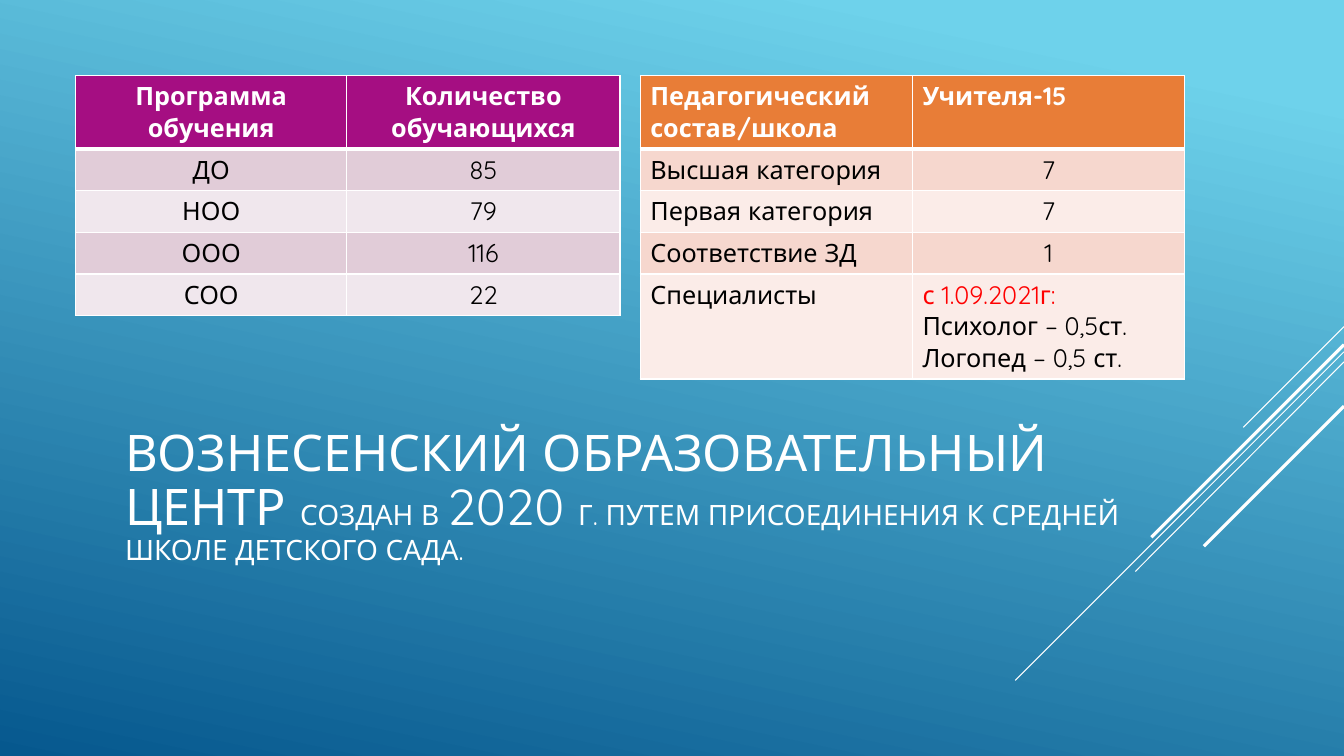
"""Build the education centre slide with its programme and staff tables."""
from dataclasses import dataclass

from lxml.etree import SubElement
from pptx import Presentation
from pptx.dml.color import RGBColor
from pptx.enum.shapes import MSO_CONNECTOR
from pptx.enum.text import MSO_ANCHOR, MSO_AUTO_SIZE, PP_ALIGN
from pptx.oxml.ns import qn
from pptx.slide import Slide
from pptx.util import Emu, Pt

FONT = "Quicksand"
WHITE = RGBColor(0xFF, 0xFF, 0xFF)
BLACK = RGBColor(0x00, 0x00, 0x00)
RED = RGBColor(0xFF, 0x00, 0x00)
SKY = RGBColor(0x6E, 0xD2, 0xEB)
NAVY = RGBColor(0x06, 0x58, 0x8E)
PURPLE = RGBColor(0xA5, 0x0E, 0x82)
PURPLE_MID = RGBColor(0xE1, 0xCC, 0xD8)
PURPLE_PALE = RGBColor(0xF0, 0xE7, 0xED)
ORANGE = RGBColor(0xE8, 0x7D, 0x37)
ORANGE_MID = RGBColor(0xF6, 0xD7, 0xCE)
ORANGE_PALE = RGBColor(0xFB, 0xEC, 0xE8)


@dataclass(frozen=True)
class Diagonal:
    top: int
    end_x: int
    end_y: int
    weight: float


@dataclass(frozen=True)
class TableSpec:
    left: int
    cols: tuple[int, ...]
    row_heights: tuple[int, ...]
    head: RGBColor
    bands: tuple[RGBColor, RGBColor]
    rows: tuple[tuple[str, ...], ...]
    centred: frozenset[tuple[int, int]]
    red_cells: frozenset[tuple[int, int]] = frozenset()


SLIDE_W, SLIDE_H = 1333, 750
TABLE_TOP = 75

DIAGONALS = (
    Diagonal(324, 1233, 424, 0.75),
    Diagonal(349, 1007, 675, 0.75),
    Diagonal(359, 1126, 567, 0.75),
    Diagonal(342, 1142, 533, 2.25),
    Diagonal(403, 1194, 542, 2.25),
)

TITLE_RUNS = (
    ("ВОЗНЕСЕНСКИЙ ОБРАЗОВАТЕЛЬНЫЙ ЦЕНТР ", 36),
    ("СОЗДАН В ", 20),
    ("2020 ", 36),
    ("Г. ПУТЕМ ПРИСОЕДИНЕНИЯ К СРЕДНЕЙ ШКОЛЕ ДЕТСКОГО САДА.", 20),
)

PROGRAMMES = TableSpec(
    75, (269, 271), (68, 41, 41, 41, 41), PURPLE, (PURPLE_MID, PURPLE_PALE),
    (
        ("Программа обучения", "Количество обучающихся"),
        ("ДО", "85"),
        ("НОО", "79"),
        ("ООО", "116"),
        ("СОО", "22"),
    ),
    frozenset((r, c) for r in range(5) for c in range(2)),
)

STAFF = TableSpec(
    635, (270, 270), (68, 41, 41, 41, 101), ORANGE, (ORANGE_MID, ORANGE_PALE),
    (
        ("Педагогический состав/школа", "Учителя-15"),
        ("Высшая категория", "7"),
        ("Первая категория", "7"),
        ("Соответствие ЗД", "1"),
        ("Специалисты", "с 1.09.2021г:\nПсихолог – 0,5ст. Логопед – 0,5 ст."),
    ),
    frozenset((r, 1) for r in range(1, 4)),
    frozenset({(4, 1)}),
)


def px(n: int) -> Emu:
    """Convert px, at 100 to the inch, into EMU."""
    return Emu(n * 9144)


def set_background(s: Slide) -> None:
    """Fill the slide background with the blue gradient."""
    fill = s.background.fill
    fill.gradient()
    fill.gradient_angle = 258
    for stop, position, color in zip(fill.gradient_stops, (0.1, 1.0), (SKY, NAVY)):
        stop.position = position
        stop.color.rgb = color


def add_diagonal(s: Slide, d: Diagonal) -> None:
    """Draw one white line from the right edge of the slide."""
    line = s.shapes.add_connector(
        MSO_CONNECTOR.STRAIGHT, px(SLIDE_W), px(d.top), px(d.end_x), px(d.end_y))
    line.line.color.rgb = WHITE
    line.line.width = Pt(d.weight)
    SubElement(line._element.spPr, qn("a:effectLst"))


def fill_title(s: Slide) -> None:
    """Place and write the slide title."""
    sp = s.shapes.title
    sp.left, sp.top, sp.width, sp.height = px(114), px(384), px(1043), px(269)
    tf = sp.text_frame
    tf.word_wrap = True
    tf.auto_size = MSO_AUTO_SIZE.NONE
    tf.vertical_anchor = MSO_ANCHOR.MIDDLE
    tf.margin_bottom = px(55)
    p = tf.paragraphs[0]
    p.alignment = PP_ALIGN.LEFT
    p.line_spacing = 0.9
    for text, size in TITLE_RUNS:
        r = p.add_run()
        r.text = text
        r.font.name = FONT
        r.font.size = Pt(size)
        r.font.color.rgb = WHITE


def set_borders(cell, bottom: float, top: float) -> None:
    """Give a cell white borders, ahead of its fill."""
    tc_pr = cell._tc.get_or_add_tcPr()
    weights = (("a:lnL", 1), ("a:lnR", 1), ("a:lnT", top), ("a:lnB", bottom))
    for i, (tag, weight) in enumerate(weights):
        ln = SubElement(tc_pr, qn(tag), w=str(Pt(weight)))
        solid = SubElement(ln, qn("a:solidFill"))
        SubElement(solid, qn("a:srgbClr"), val=str(WHITE))
        tc_pr.insert(i, ln)


def add_data_table(s: Slide, spec: TableSpec) -> None:
    """Draw a banded table with a coloured header row."""
    frame = s.shapes.add_table(
        len(spec.rows), len(spec.cols), px(spec.left), px(TABLE_TOP),
        px(sum(spec.cols)), px(sum(spec.row_heights)))
    table = frame.table
    for col, width in zip(table.columns, spec.cols):
        col.width = px(width)
    for row, height in zip(table.rows, spec.row_heights):
        row.height = px(height)
    for i, texts in enumerate(spec.rows):
        for j, text in enumerate(texts):
            cell = table.cell(i, j)
            cell.fill.solid()
            cell.fill.fore_color.rgb = spec.bands[(i - 1) % 2] if i else spec.head
            set_borders(cell, bottom=1 if i else 3, top=3 if i == 1 else 1)
            cell.text_frame.text = text
            for k, p in enumerate(cell.text_frame.paragraphs):
                p.alignment = PP_ALIGN.CENTER if (i, j) in spec.centred else PP_ALIGN.LEFT
                font = p.runs[0].font
                font.name = FONT
                font.size = Pt(18)
                font.bold = i == 0
                body = RED if k == 0 and (i, j) in spec.red_cells else BLACK
                font.color.rgb = body if i else WHITE


def main() -> None:
    """Build and save the slide."""
    prs = Presentation()
    prs.slide_width, prs.slide_height = px(SLIDE_W), px(SLIDE_H)
    s = prs.slides.add_slide(prs.slide_layouts[5])
    set_background(s)
    for d in DIAGONALS:
        add_diagonal(s, d)
    fill_title(s)
    for spec in (PROGRAMMES, STAFF):
        add_data_table(s, spec)
    prs.save("out.pptx")


if __name__ == "__main__":
    main()
